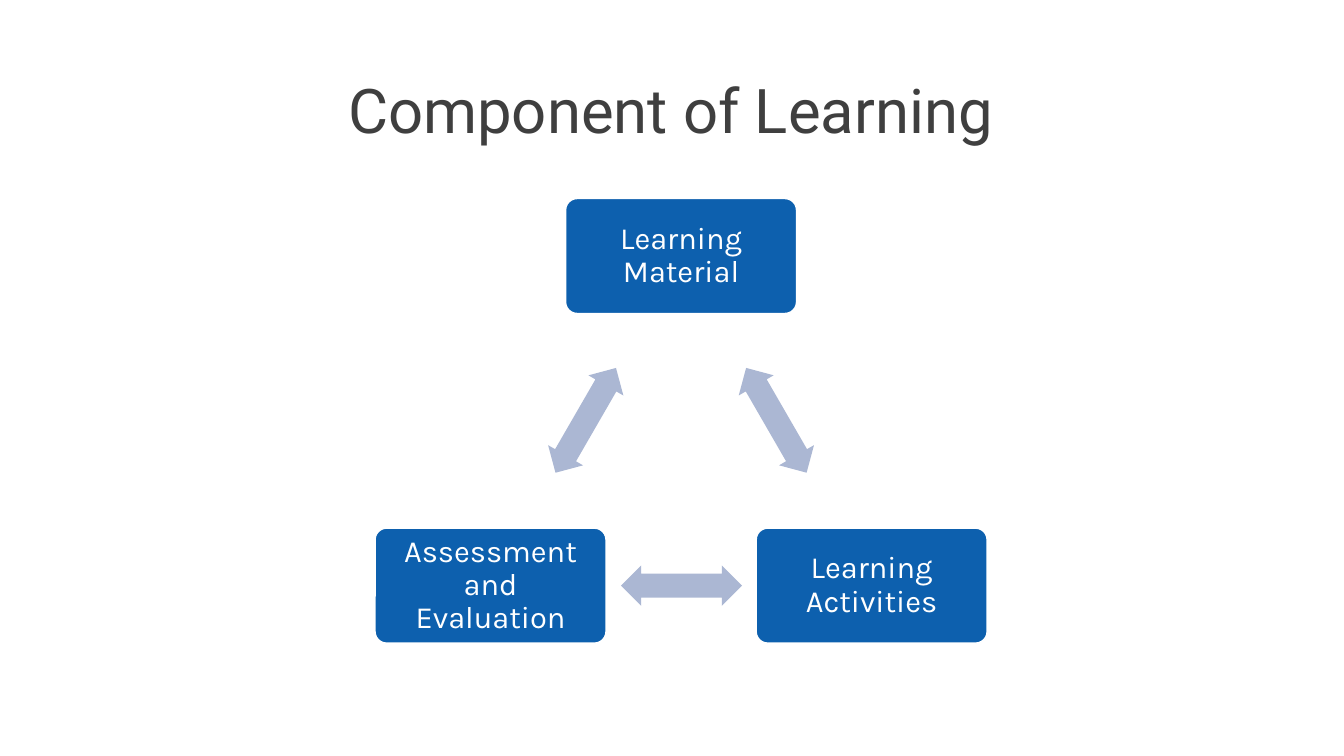
from pptx import Presentation
from pptx.dml.color import RGBColor
from pptx.enum.shapes import MSO_SHAPE as SHAPE
from pptx.enum.text import MSO_ANCHOR as ANCHOR, MSO_AUTO_SIZE as AUTO, PP_ALIGN as ALIGN
from pptx.util import Inches, Pt

BLUE = RGBColor(0x0D, 0x60, 0xAE)
PALE = RGBColor(0xAB, 0xB7, 0xD3)
GREY = RGBColor(0x3F, 0x3F, 0x3F)
WHITE = RGBColor(0xFF, 0xFF, 0xFF)

BOX_W, BOX_H = 2.29, 1.14
ARROW_W, ARROW_H = 1.2, 0.4
COMPONENTS = [
    ("Learning Material", 5.61, 1.97),
    ("Learning Activities", 7.5, 5.24),
    ("Assessment and Evaluation", 3.72, 5.24),
]
ARROWS = [(7.1, 3.97, 60), (6.16, 5.61, 180), (5.21, 3.97, 300)]


class CycleSlide:
    """Draws the title, boxes and arrows of a cycle on one slide."""

    title_font = {"name": "Roboto", "size": Pt(44), "bold": False}
    box_font = {"name": "Karla", "size": Pt(22)}

    def __init__(self, prs):
        self.s = prs.slides.add_slide(prs.slide_layouts[5])

    def label(self, sp, text, font, color, anchor, inset):
        tf = sp.text_frame
        frame = {"word_wrap": True, "auto_size": AUTO.NONE, "vertical_anchor": anchor}
        for name, value in frame.items():
            setattr(tf, name, value)
        for side, value in inset.items():
            setattr(tf, f"margin_{side}", Inches(value))
        p = tf.paragraphs[0]
        p.alignment = ALIGN.CENTER
        p.line_spacing = 0.9
        p.space_before = Pt(0)
        r = p.add_run()
        r.text = text
        for name, value in font.items():
            setattr(r.font, name, value)
        r.font.color.rgb = color

    def title(self, text, x, y, w, h):
        sp = self.s.shapes.title
        sp.left, sp.top, sp.width, sp.height = map(Inches, (x, y, w, h))
        inset = {"left": 0.1, "right": 0.1, "top": 0.05, "bottom": 0.05}
        self.label(sp, text, self.title_font, GREY, ANCHOR.TOP, inset)

    def shape(self, kind, x, y, w, h, fill, adjustments):
        sp = self.s.shapes.add_shape(kind, *map(Inches, (x, y, w, h)))
        sp.shadow.inherit = False
        sp.fill.solid()
        sp.fill.fore_color.rgb = fill
        for i, value in enumerate(adjustments):
            sp.adjustments[i] = value
        return sp

    def box(self, text, x, y):
        sp = self.shape(SHAPE.ROUNDED_RECTANGLE, x, y, BOX_W, BOX_H, BLUE, [0.1])
        sp.line.color.rgb = WHITE
        sp.line.width = Pt(1)
        inset = dict.fromkeys(("left", "right", "top", "bottom"), 0.12)
        self.label(sp, text, self.box_font, WHITE, ANCHOR.MIDDLE, inset)

    def arrow(self, x, y, angle):
        sp = self.shape(SHAPE.LEFT_RIGHT_ARROW, x, y, ARROW_W, ARROW_H, PALE, [0.6, 0.5])
        sp.line.fill.background()
        sp.rotation = angle


def main():
    prs = Presentation()
    prs.slide_width, prs.slide_height = Inches(13.33), Inches(7.5)
    slide = CycleSlide(prs)
    slide.title("Component of Learning", 0.64, 0.75, 12.03, 1.03)
    for component, arrow in zip(COMPONENTS, ARROWS):
        slide.box(*component)
        slide.arrow(*arrow)
    prs.save("out.pptx")


if __name__ == "__main__":
    main()
